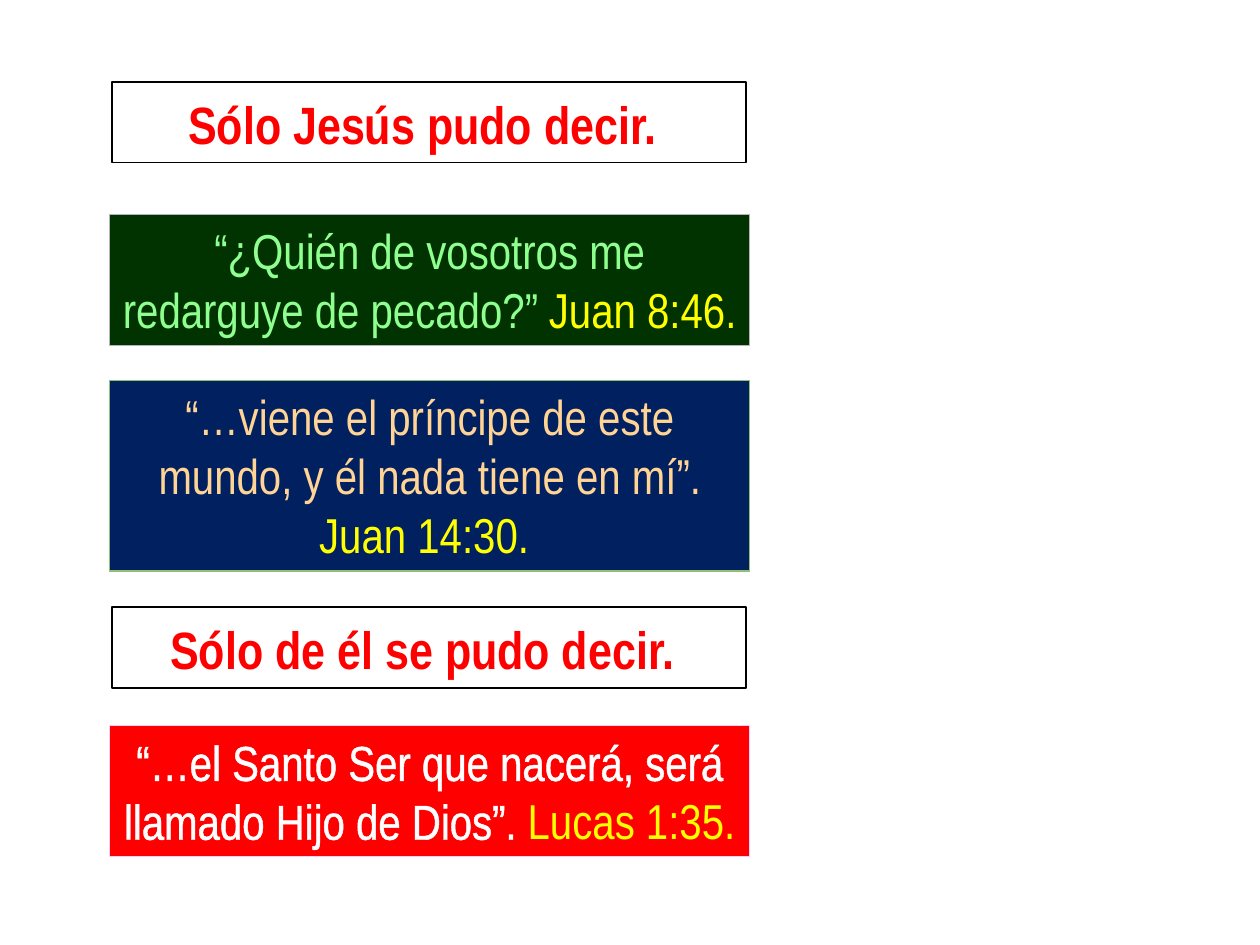
from lxml import etree
from pptx import Presentation
from pptx import util as u
from pptx.dml import color
from pptx.enum import shapes, text
from pptx.oxml import ns

FONT = "Arial Narrow"
COLORS = {
    "white": "FFFFFF", "black": "000000", "red": "FF0000", "yellow": "FFFF00",
    "navy": "002060", "leaf": "91BF77", "peach": "FFD495", "cream": "FFEACA",
    "forest": "003300", "gray": "B5B5B5", "mint": "8FFF8F", "lime": "9BFF9B",
    "pink": "FFCCFF",
}


def rgb(name):
    """Return the named colour."""
    return color.RGBColor.from_string(COLORS[name])


def add_box(s, box, fill, line, width):
    """Add a bordered rectangle and return its centred paragraph."""
    sp = s.shapes.add_shape(shapes.MSO_SHAPE.RECTANGLE, *map(u.Cm, box))
    sp.shadow.inherit = False
    sp.fill.solid()
    sp.fill.fore_color.rgb = rgb(fill)
    sp.line.color.rgb = rgb(line)
    sp.line.width = u.Pt(width)
    tf = sp.text_frame
    tf.word_wrap = True
    tf.auto_size = text.MSO_AUTO_SIZE.SHAPE_TO_FIT_TEXT
    tf.vertical_anchor = text.MSO_ANCHOR.TOP
    p = tf.paragraphs[0]
    p.alignment = text.PP_ALIGN.CENTER
    return p


def add_run(p, words, size, fill, outline, width, bold=False):
    """Add a run with a coloured outline to a paragraph."""
    r = p.add_run()
    r.text = words
    r.font.name = FONT
    r.font.size = u.Pt(size)
    r.font.bold = bold
    r.font.color.rgb = rgb(fill)
    ln = etree.Element(ns.qn("a:ln"), w=str(u.Pt(width)))
    solid = etree.SubElement(ln, ns.qn("a:solidFill"))
    etree.SubElement(solid, ns.qn("a:srgbClr"), val=COLORS[outline])
    r.font._element.insert(0, ln)


def add_heading(s, box, words):
    """Add a white box with a bold red heading."""
    p = add_box(s, box, "white", "black", 1)
    add_run(p, words, 30, "red", "red", 0.75, True)
    add_run(p, " ", 32, "red", "red", 0.75, True)


def add_verse(s, box, quote, source, fill, line, ink, outline):
    """Add a coloured box with a quotation and its yellow reference."""
    p = add_box(s, box, fill, line, 0.75)
    add_run(p, quote + " ", 28, ink, outline, 1.5)
    add_run(p, source + " ", 28, "yellow", "yellow", 1.5)


def main():
    """Build the slide and save it."""
    prs = Presentation()
    prs.slide_width, prs.slide_height = u.Cm(25.4), u.Cm(19.05)
    s = prs.slides.add_slide(prs.slide_layouts[6])
    verses = [
        (7.67, 3.84, "“…viene el príncipe de este mundo, y él nada tiene en mí”.",
         "Juan 14:30.", "navy", "leaf", "peach", "cream"),
        (4.32, 2.64, "“¿Quién de vosotros me redarguye de pecado?”",
         "Juan 8:46.", "forest", "gray", "mint", "lime"),
        (14.63, 2.64, "“…el Santo Ser que nacerá, será llamado Hijo de Dios”.",
         "Lucas 1:35.", "red", "pink", "white", "white"),
    ]
    for top, height, *verse in verses:
        add_verse(s, (2.21, top, 12.9, height), *verse)
    for top, words in [(1.65, "Sólo Jesús pudo decir."),
                       (12.24, "Sólo de él se pudo decir.")]:
        add_heading(s, (2.26, top, 12.78, 1.63), words)
    prs.save("out.pptx")


if __name__ == "__main__":
    main()
